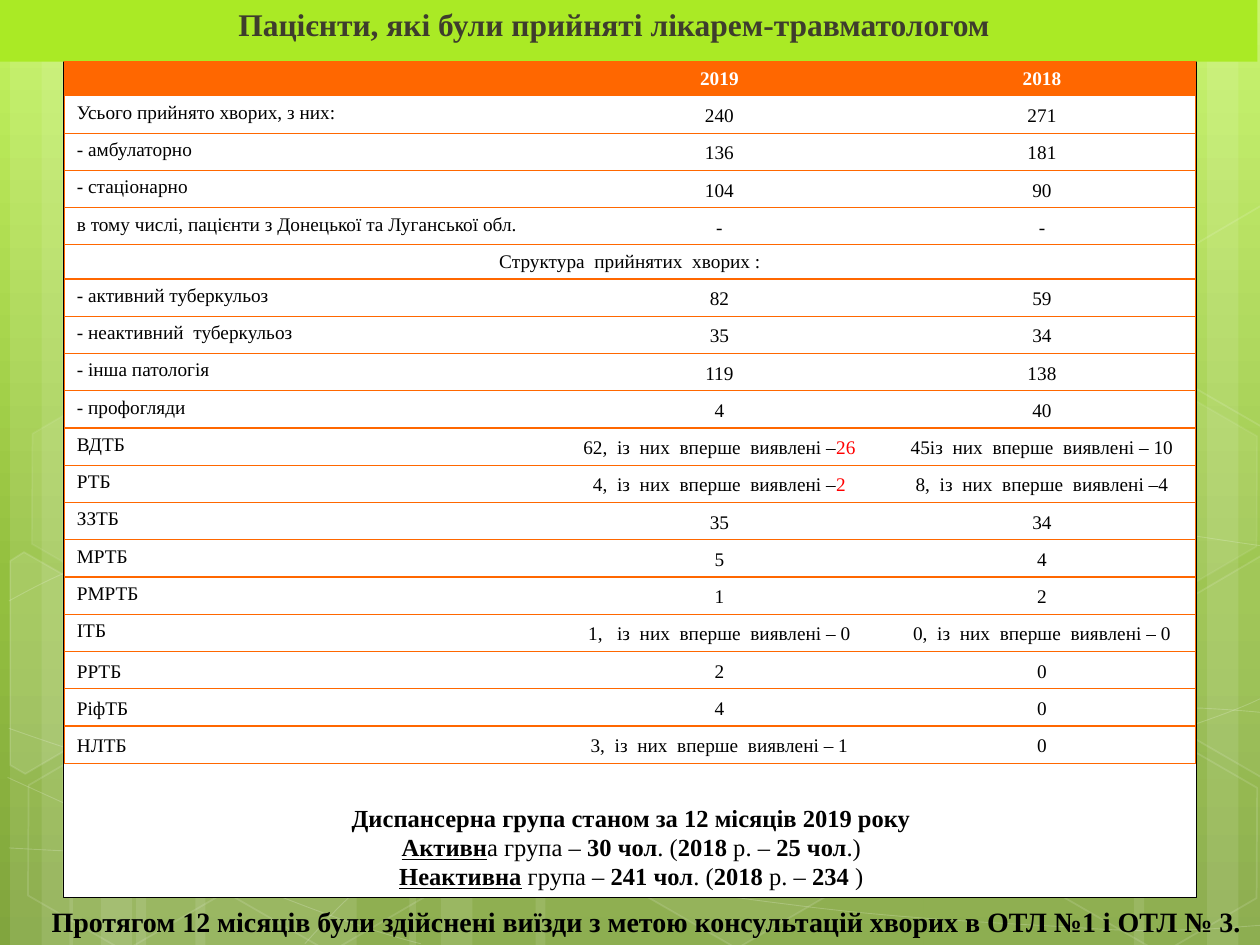
from copy import deepcopy
from math import cos, radians, sin

from lxml.etree import SubElement
from pptx import Presentation
from pptx.dml.color import RGBColor
from pptx.enum.shapes import MSO_SHAPE
from pptx.enum.text import MSO_ANCHOR, PP_ALIGN
from pptx.oxml.ns import qn
from pptx.util import Inches, Pt

FONT = "Times New Roman"
COLORS = {"white": "FFFFFF", "black": "000000", "lime": "AAEA25", "title": "3E3D2D",
          "orange": "FF6700", "red": "FF0000"}
BACKGROUND = [(0, "C3F35F"), (0.62, "93BF3F"), (1, "81A53E")]

TITLE = "Пацієнти, які були прийняті лікарем-травматологом"
FOOTER = "Протягом 12 місяців були здійснені виїзди з метою консультацій хворих в ОТЛ №1 і ОТЛ № 3."
# Runs: text, then b for bold and u for underlined
SUMMARY = [
    [("Диспансерна група станом за 12 місяців 2019 року", "b")],
    [("Активн", "bu"), ("а група – ", ""), ("30 чол", "b"), (". (", ""), ("2018", "b"),
     (" р. – ", ""), ("25 чол", "b"), (".)", "")],
    [("Неактивна", "bu"), (" група – ", ""), ("241 чол", "b"), (". (", ""), ("2018", "b"),
     (" р. – ", ""), ("234 ", "b"), (")", "")],
]

NEW = "із  них  вперше  виявлені –"
# A tuple in a cell is black text followed by red text
ROWS = [
    ("", "2019", "2018"),
    ("Усього прийнято хворих, з них:", "240", "271"),
    ("- амбулаторно", "136", "181"),
    ("- стаціонарно", "104", "90"),
    ("в тому числі, пацієнти з Донецької та Луганської обл.", "-", "-"),
    ("Структура  прийнятих  хворих :",),
    ("- активний туберкульоз", "82", "59"),
    ("- неактивний  туберкульоз", "35", "34"),
    ("- інша патологія", "119", "138"),
    ("- профогляди", "4", "40"),
    ("ВДТБ", (f"62,  {NEW}", "26"), f"45{NEW} 10"),
    ("РТБ", (f"4,  {NEW}", "2"), f"8,  {NEW}4"),
    ("ЗЗТБ", "35", "34"),
    ("МРТБ", "5", "4"),
    ("РМРТБ", "1", "2"),
    ("ІТБ", f"1,   {NEW} 0", f"0,  {NEW} 0"),
    ("РРТБ", "2", "0"),
    ("РіфТБ", "4", "0"),
    ("НЛТБ", f"3,  {NEW} 1", "0"),
]
COL_WIDTHS = [3.86, 2.68, 2.44]
MIDDLE_LABELS_FROM = 16  # the last labels are centred vertically

# Left and width of the full-height light bands
STRIPES = [(1.08, 1.75), (0.08, 0.5), (0.33, 0.83), (1.55, 1.75), (0.55, 0.5), (0.8, 0.83),
           (7.33, 1.75), (9.58, 0.5), (9, 0.83), (4.25, 3.08), (3.25, 0.5), (3.5, 0.83)]
# Start point, then three points (two controls and an end) for each Bezier segment
CURVES = [
    [(0.07, 6.73), (0.61, 6.76), (1.15, 6.79), (1.9, 6.78), (2.65, 6.77), (3.58, 6.75),
     (4.58, 6.65), (5.58, 6.55), (7, 6.36), (7.92, 6.17), (8.83, 5.98), (9.77, 5.68),
     (10.07, 5.51)],
    [(0.07, 4.77), (0.36, 4.61), (0.65, 4.46), (1.21, 4.31), (1.78, 4.16), (2.59, 3.94),
     (3.47, 3.87), (4.36, 3.8), (5.44, 3.79), (6.54, 3.87), (7.64, 3.95), (9.47, 4.26),
     (10.07, 4.34)],
    [(0.06, 6.17), (1.27, 6.72), (2.47, 7.27), (3.34, 7.49)],
    [(0.07, 5.78), (0.38, 5.89), (0.7, 6), (1.28, 6.16), (1.86, 6.31), (2.73, 6.56),
     (3.57, 6.73), (4.4, 6.9), (5.45, 7.08), (6.28, 7.18), (7.11, 7.29), (8, 7.33),
     (8.53, 7.36), (9.05, 7.4), (9.19, 7.38), (9.45, 7.38), (9.71, 7.37), (9.89, 7.35),
     (10.07, 7.34)],
    [(2.42, 7.49), (2.6, 7.29), (2.78, 7.09), (3.02, 6.91), (3.26, 6.73), (3.6, 6.53),
     (3.88, 6.39), (4.16, 6.25), (4.33, 6.19), (4.7, 6.09), (5.06, 5.99), (5.73, 5.85),
     (6.08, 5.78), (6.44, 5.71), (6.49, 5.71), (6.8, 5.69), (7.11, 5.66), (7.6, 5.63),
     (7.94, 5.62), (8.29, 5.61), (8.86, 5.62), (9.53, 5.62), (9.71, 5.63), (9.88, 5.64),
     (10.06, 5.66)],
]
TILT = 30
# Left, top, fill opacity, line opacity (percent)
HEXAGONS = [(4.97, 5.89, 6, 12), (0.11, 5.91, 0, 12), (0.14, 3.12, 7, 8), (1.74, 5.92, 0, 12),
            (7.53, 4.53, 10, 12), (8.34, 5.93, 0, 12), (8.34, 3.14, 7, 8)]
# Hexagons cut by the slide's edge: centre of rotation, points as seen, fill opacity
CUT_HEXAGONS = [
    ((0.36, 5.35), [(0.08, 4.45), (0.19, 4.38), (0.96, 4.82), (0.95, 5.7), (0.2, 6.14),
                    (0.08, 6.07)], 10),
    ((9.85, 5.2), [(9.26, 4.85), (10.01, 4.41), (10.09, 4.46), (10.09, 6.13), (10.02, 6.17),
                   (9.26, 5.73)], 4),
    ((9.85, 2.41), [(9.26, 2.07), (10.01, 1.63), (10.1, 1.68), (10.09, 3.35), (10.02, 3.39),
                    (9.26, 2.95)], 0),
]


def rgb(name):
    return RGBColor.from_string(COLORS[name])


def set_alpha(fill_parent, percent):
    for clr in fill_parent.findall(qn("a:solidFill") + "/" + qn("a:srgbClr")):
        SubElement(clr, qn("a:alpha"), val=str(percent * 1000))


def paint(sp, fill=None, line=None, width=1, fill_alpha=100, line_alpha=100):
    sp.shadow.inherit = False
    if fill and fill_alpha:
        sp.fill.solid()
        sp.fill.fore_color.rgb = rgb(fill)
        set_alpha(sp._element.spPr, fill_alpha)
    else:
        sp.fill.background()
    if line:
        sp.line.color.rgb = rgb(line)
        sp.line.width = Pt(width)
        set_alpha(sp.line._get_or_add_ln(), line_alpha)
    else:
        sp.line.fill.background()


def add_rect(s, x, y, w, h, kind=MSO_SHAPE.RECTANGLE, **look):
    sp = s.shapes.add_shape(kind, Inches(x), Inches(y), Inches(w), Inches(h))
    paint(sp, **look)
    return sp


def add_outline(s, points, close, **look):
    pts = [(Inches(x), Inches(y)) for x, y in points]
    fb = s.shapes.build_freeform(*pts[0])
    fb.add_line_segments(pts[1:], close=close)
    sp = fb.convert_to_shape()
    paint(sp, line="white", **look)
    return sp


def bend(sp):
    """Turn each three line segments of an outline into one Bezier segment."""
    lines = list(sp._element.iter(qn("a:lnTo")))
    for i in range(0, len(lines), 3):
        curve = SubElement(lines[i].getparent(), qn("a:cubicBezTo"))
        for line in lines[i:i + 3]:
            curve.append(line[0])
            line.getparent().remove(line)


def untilt(point, centre):
    a = radians(TILT)
    dx, dy = point[0] - centre[0], point[1] - centre[1]
    return centre[0] + dx * cos(a) + dy * sin(a), centre[1] - dx * sin(a) + dy * cos(a)


def set_font(font, size, color, bold=None):
    font.name, font.size, font.bold = FONT, Pt(size), bold
    font.color.rgb = rgb(color)


def add_text(s, x, y, w, h):
    tf = s.shapes.add_textbox(Inches(x), Inches(y), Inches(w), Inches(h)).text_frame
    tf.word_wrap = True
    return tf


def set_borders(cell, sides):
    """Orange lines on the given sides, none elsewhere."""
    tcPr = cell._tc.get_or_add_tcPr()
    for i, side in enumerate("LRTB"):
        ln = tcPr.makeelement(qn(f"a:ln{side}"), {"w": str(Pt(0.75))})
        if side in sides:
            SubElement(SubElement(ln, qn("a:solidFill")), qn("a:srgbClr"), val=COLORS["orange"])
        else:
            SubElement(ln, qn("a:noFill"))
        tcPr.insert(i, ln)


def add_background(s):
    fill = s.background.fill
    fill.gradient()
    fill.gradient_angle = 270
    stops = s._element.find(".//" + qn("a:gsLst"))
    stops.append(deepcopy(stops[0]))
    for stop, (position, color) in zip(fill.gradient_stops, BACKGROUND):
        stop.position = position
        stop.color.rgb = RGBColor.from_string(color)
    for x, w in STRIPES:
        add_rect(s, x, 0, w, 7.5, fill="white", fill_alpha=10)
    for points in CURVES:
        bend(add_outline(s, points, False, width=0.5, line_alpha=20))
    for x, y, fill_alpha, line_alpha in HEXAGONS:
        sp = add_rect(s, x, y, 1.75, 1.52, MSO_SHAPE.HEXAGON, fill="white", line="white",
                      fill_alpha=fill_alpha, line_alpha=line_alpha)
        sp.adjustments[0] = 0.285
        sp.rotation = TILT
    for centre, points, fill_alpha in CUT_HEXAGONS:
        sp = add_outline(s, [untilt(pt, centre) for pt in points], True, fill="white",
                         fill_alpha=fill_alpha, line_alpha=12)
        sp.rotation = TILT


def add_patients_table(s):
    last = len(COL_WIDTHS) - 1
    tbl = s.shapes.add_table(len(ROWS), len(COL_WIDTHS), Inches(0.51), Inches(0.49),
                             Inches(sum(COL_WIDTHS)), Inches(5.57)).table
    tbl._tbl.tblPr.find(qn("a:tableStyleId")).text = "{2D5ABB26-0587-4C30-8999-92F81FD0307C}"
    tbl.horz_banding = False
    for col, w in zip(tbl.columns, COL_WIDTHS):
        col.width = Inches(w)
    for i, row in enumerate(ROWS):
        header, section = i == 0, len(row) == 1
        tbl.rows[i].height = Inches(0.27 if header or section else 0.29)
        if section:
            tbl.cell(i, 0).merge(tbl.cell(i, last))
        for j in range(last + 1):
            cell = tbl.cell(i, j)
            cell.fill.solid()
            cell.fill.fore_color.rgb = rgb("orange" if header else "white")
            set_borders(cell, "TB" + "L" * (j == 0) + "R" * (j == last or section))
            if j >= len(row):
                continue
            label = j == 0 and not section
            p = cell.text_frame.paragraphs[0]
            set_font(p.font, 11, "white" if header else "black", header)
            if not row[j]:
                SubElement(p._p, qn("a:endParaRPr"), sz="1100")
                continue
            parts = row[j] if isinstance(row[j], tuple) else (row[j],)
            for k, part in enumerate(parts):
                r = p.add_run()
                r.text = part
                if k:
                    r.font.color.rgb = rgb("red")
            p.alignment = PP_ALIGN.LEFT if label else PP_ALIGN.CENTER
            middle = not label or i >= MIDDLE_LABELS_FROM
            cell.vertical_anchor = MSO_ANCHOR.MIDDLE if middle else MSO_ANCHOR.TOP
            if middle and not header and not section:
                p.line_spacing = 1.15


prs = Presentation()
prs.slide_width, prs.slide_height = Inches(10), Inches(7.5)
s = prs.slides.add_slide(prs.slide_layouts[6])
add_background(s)
add_rect(s, 0.5, 0.36, 9, 6.76, fill="white", line="black", width=0.5)

title = add_rect(s, -0.05, -0.01, 10.03, 0.5, fill="lime").text_frame
title.vertical_anchor = MSO_ANCHOR.TOP
title.margin_right = Inches(0.28)
add_patients_table(s)
footer = add_text(s, 0.01, 7.13, 9.99, 0.37)
footer.margin_right = Inches(0.15)
for tf, text, align, size, color in ((title, TITLE, PP_ALIGN.CENTER, 18, "title"),
                                     (footer, FOOTER, PP_ALIGN.RIGHT, 16, "black")):
    p = tf.paragraphs[0]
    p.text, p.alignment = text, align
    set_font(p.font, size, color, True)

tf = add_text(s, 0.52, 6.32, 8.98, 0.81)
for i, runs in enumerate(SUMMARY):
    p = tf.add_paragraph() if i else tf.paragraphs[0]
    p.alignment = PP_ALIGN.CENTER
    set_font(p.font, 14, "black")
    for text, style in runs:
        r = p.add_run()
        r.text = text
        r.font.bold, r.font.underline = "b" in style, "u" in style

prs.save("out.pptx")
